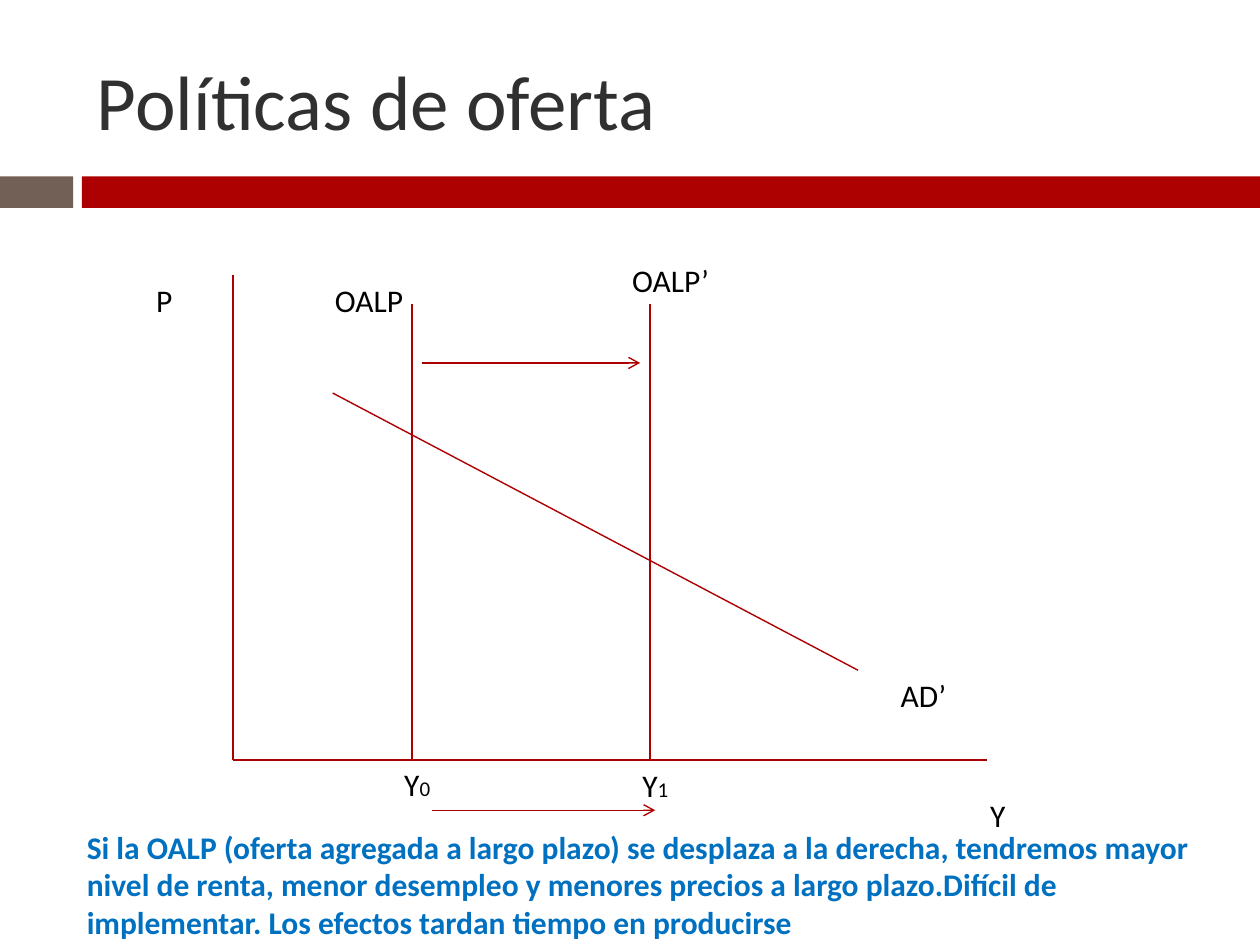
"""Build the supply-side policy slide with its aggregate demand diagram."""
import pptx
import pptx.util
import pptx.dml.color
import pptx.enum.shapes
import pptx.enum.text
import pptx.oxml
import pptx.oxml.ns

Pt = pptx.util.Pt
HUES = {"red": "AD0101", "brown": "726056", "dark": "303030",
        "black": "000000", "blue": "0070C0"}
FONT = "Calibri"
TITLE = "Políticas de oferta"
NOTE = ("Si la OALP (oferta agregada a largo plazo) se desplaza a la derecha, "
        "tendremos mayor nivel de renta, menor desempleo y menores precios a "
        "largo plazo.Difícil de implementar. Los efectos tardan tiempo en producirse")

LEFT, BASE, TOP = 133.2, 434.2, 173.5
OLD, NEW = 235.4, 371.5
BANDS = [("brown", 0, 41.8), ("red", 46.8, 673.2)]
LINES = [
    (LEFT, 157, LEFT, BASE, False),
    (LEFT, BASE, 563.8, BASE, False),
    (OLD, TOP, OLD, BASE, False),
    (NEW, TOP, NEW, BASE, False),
    (241.2, 207.4, 365.8, 207.4, True),
    (190.1, 224.6, 490.3, 383, False),
    (247, 463, 374.4, 463, True),
]
LABELS = [
    ([("OALP", 18)], 184.3, 157, 62.6),
    ([("OALP’", 18)], 354.2, 145.4, 62.6),
    ([("AD’", 18)], 507.6, 383, 85),
    ([("P", 18)], 82.1, 157, 39.6),
    ([("Y", 18)], 558.7, 451.4, 90.7),
    ([("Y", 18), ("0", 12)], 223.9, 433.4, 67.7),
    ([("Y", 18), ("1", 12)], 360, 434.2, 36.7),
]


def tint(name):
    return pptx.dml.color.RGBColor.from_string(HUES[name])


def write(frame, runs, hue, bold=False):
    para = frame.paragraphs[0]
    para.alignment = pptx.enum.text.PP_ALIGN.LEFT
    for text, size in runs:
        run = para.add_run()
        run.text = text
        run.font.name = FONT
        run.font.size = Pt(size)
        run.font.bold = bold
        run.font.color.rgb = tint(hue)


def label(slide, runs, x, y, wide, high=28.8, hue="black", bold=False):
    frame = slide.shapes.add_textbox(Pt(x), Pt(y), Pt(wide), Pt(high)).text_frame
    frame.word_wrap = True
    frame.auto_size = pptx.enum.text.MSO_AUTO_SIZE.SHAPE_TO_FIT_TEXT
    write(frame, runs, hue, bold)


def band(slide, hue, x, wide):
    bar = slide.shapes.add_shape(pptx.enum.shapes.MSO_SHAPE.RECTANGLE,
                                 Pt(x), Pt(100.8), Pt(wide), Pt(18))
    bar.shadow.inherit = False
    bar.fill.solid()
    bar.fill.fore_color.rgb = tint(hue)
    bar.line.fill.background()


def draw(slide, x1, y1, x2, y2, arrow):
    line = slide.shapes.add_connector(pptx.enum.shapes.MSO_CONNECTOR.STRAIGHT,
                                      Pt(x1), Pt(y1), Pt(x2), Pt(y2))
    line.line.color.rgb = tint("red")
    line.line.width = Pt(0.79)
    if arrow:
        tail = pptx.oxml.parse_xml(
            "<a:tailEnd %s type='arrow'/>" % pptx.oxml.ns.nsdecls("a"))
        line.line._get_or_add_ln().append(tail)
    props = line._element.spPr
    props.append(pptx.oxml.parse_xml(
        "<a:effectLst %s/>" % pptx.oxml.ns.nsdecls("a")))


def main():
    deck = pptx.Presentation()
    deck.slide_width, deck.slide_height = Pt(720), Pt(540)
    slide = deck.slides.add_slide(deck.slide_layouts[5])
    for item in BANDS:
        band(slide, *item)
    title = slide.shapes.title
    title.left, title.top, title.width, title.height = map(Pt, (48.2, 18, 642.2, 77.8))
    title.text_frame.vertical_anchor = pptx.enum.text.MSO_ANCHOR.MIDDLE
    write(title.text_frame, [(TITLE, 44)], "dark")
    for item in LINES:
        draw(slide, *item)
    for item in LABELS:
        label(slide, *item)
    label(slide, [(NOTE, 18)], 42.5, 469.4, 668.9, 72.7, "blue", True)
    deck.save("out.pptx")


if __name__ == "__main__":
    main()
